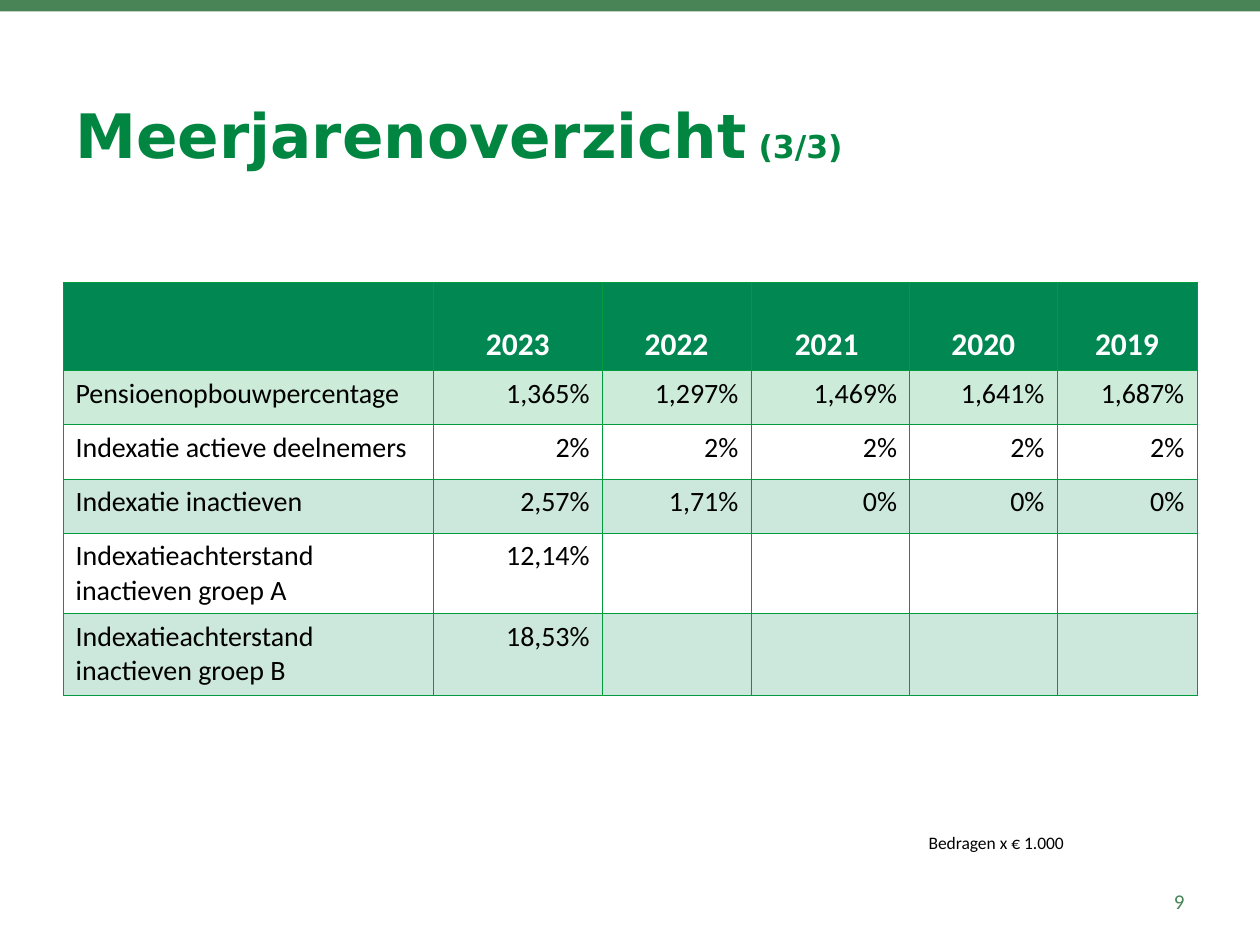
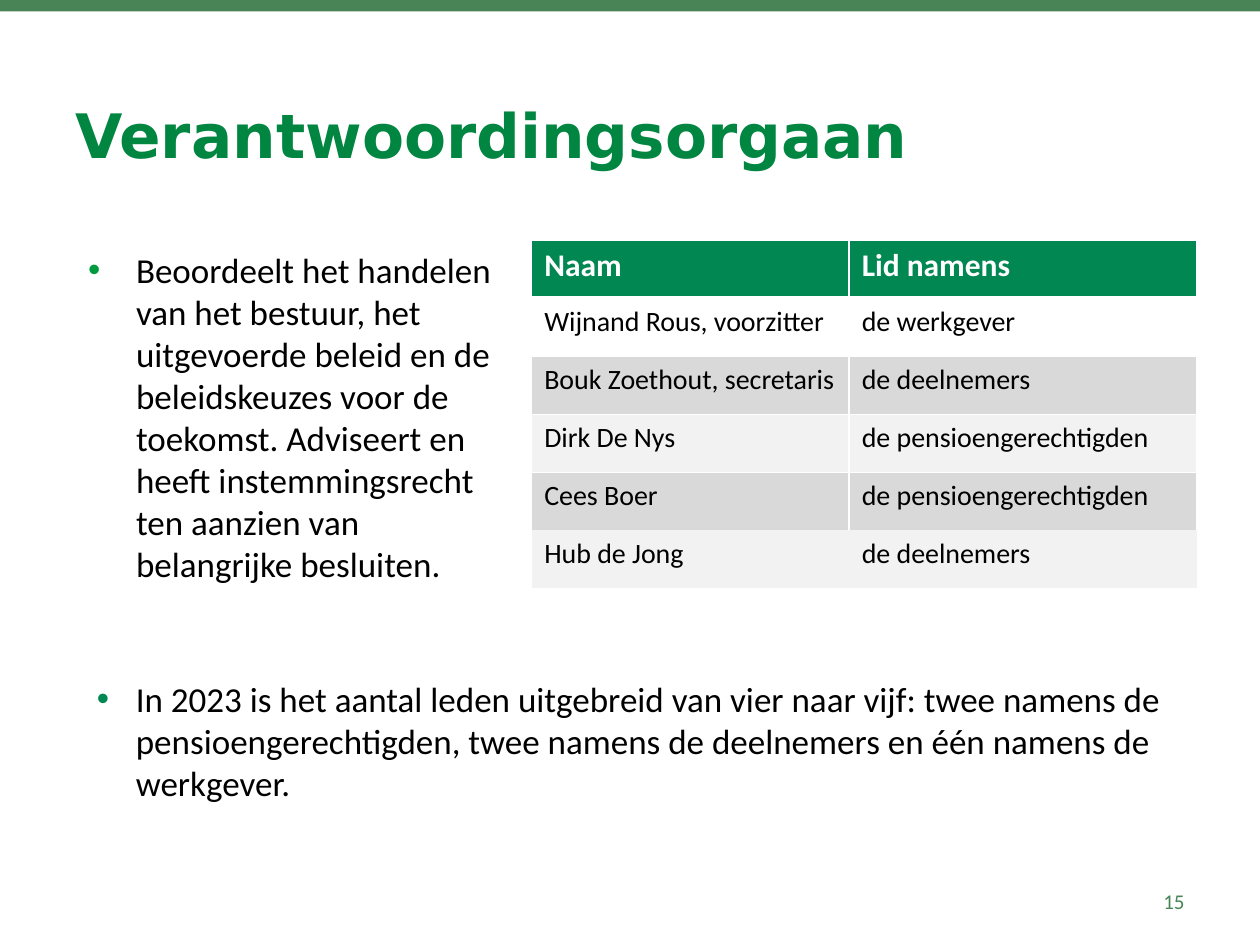
from dataclasses import dataclass
from pptx import Presentation
from pptx.dml.color import RGBColor
from pptx.enum.shapes import MSO_SHAPE as Shape
from pptx.enum.text import MSO_ANCHOR as Anchor, PP_ALIGN as Align
from pptx.oxml import parse_xml
from pptx.oxml.ns import nsdecls, qn
from pptx.util import Inches, Pt


@dataclass(frozen=True)
class Theme:
    """Colours, fonts and type sizes of the deck."""
    band: str = "488455"
    title: str = "008640"
    header: str = "008752"
    accent: str = "009B3E"
    ink: str = "000000"
    white: str = "FFFFFF"
    grey: str = "D9D9D9"
    pale: str = "F2F2F2"
    title_font: str = "DejaVu Sans"
    body_font: str = "Calibri"
    title_size: int = 35
    body_size: int = 20
    header_size: int = 18
    cell_size: int = 16
    number_size: int = 12
    note_size: int = 10


THEME = Theme()
TITLE_BOX = (0.5, 0.52, 9, 1.09)
NUMBER_BOX = (7.17, 6.95, 2.33, 0.4)
INSETS = (0.1, 0.05, 0.1, 0.05)


def style(font, size, color=THEME.ink, face=THEME.body_font, bold=False):
    """Set the look of a font."""
    font.size, font.name, font.bold = Pt(size), face, bold
    font.color.rgb = RGBColor.from_string(color)


def add_text(slide, box, text, anchor=Anchor.TOP, insets=INSETS):
    """Add a wrapping text box and return its first paragraph."""
    frame = slide.shapes.add_textbox(*map(Inches, box)).text_frame
    frame.word_wrap, frame.vertical_anchor = True, anchor
    (frame.margin_left, frame.margin_top,
     frame.margin_right, frame.margin_bottom) = map(Inches, insets)
    paragraph = frame.paragraphs[0]
    paragraph.text = text
    return paragraph


def add_bullet(slide, box, text, indent, color, insets=INSETS):
    """Add a text box with one bulleted paragraph."""
    paragraph = add_text(slide, box, text, insets=insets)
    properties = paragraph._p.get_or_add_pPr()
    properties.set("marL", str(Inches(indent)))
    properties.set("indent", str(-Inches(indent)))
    for xml in (f'<a:buClr {nsdecls("a")}><a:srgbClr val="{color}"/></a:buClr>',
                f'<a:buFont {nsdecls("a")} typeface="Arial"/>',
                f'<a:buChar {nsdecls("a")} char="•"/>'):
        properties.append(parse_xml(xml))
    style(paragraph.font, THEME.body_size)


def add_frame(prs, title, number, part=None):
    """Add a slide with its top band, title and page number."""
    slide = prs.slides.add_slide(prs.slide_layouts[6])
    band = slide.shapes.add_shape(Shape.RECTANGLE, 0, 0, prs.slide_width, Inches(0.09))
    band.shadow.inherit = False
    band.fill.solid()
    band.fill.fore_color.rgb = RGBColor.from_string(THEME.band)
    band.line.fill.background()

    heading = add_text(slide, TITLE_BOX, title, Anchor.MIDDLE)
    style(heading.font, THEME.title_size, THEME.title, THEME.title_font, True)
    if part:
        suffix = heading.add_run()
        suffix.text = f" {part}"
        suffix.font.size = Pt(THEME.header_size)

    page = add_text(slide, NUMBER_BOX, str(number), Anchor.MIDDLE)
    page.alignment = Align.RIGHT
    style(page.font, THEME.number_size, THEME.band)
    return slide


def set_borders(cell, color, widths):
    """Draw left, right, top and bottom borders; a zero width hides one."""
    properties = cell._tc.get_or_add_tcPr()
    for index, (side, width) in enumerate(zip("LRTB", widths)):
        fill = (f'<a:solidFill><a:srgbClr val="{color}"/></a:solidFill>'
                if width else "<a:noFill/>")
        properties.insert(index, parse_xml(
            f'<a:ln{side} {nsdecls("a")} w="{Pt(width)}">{fill}</a:ln{side}>'))


def fill_cell(cell, color, alpha=None):
    """Fill a cell, with an optional opacity in percent."""
    if color is None:
        cell.fill.background()
        return
    cell.fill.solid()
    cell.fill.fore_color.rgb = RGBColor.from_string(color)
    if alpha:
        rgb = cell._tc.tcPr.find(qn("a:solidFill")).find(qn("a:srgbClr"))
        rgb.append(parse_xml(f'<a:alpha {nsdecls("a")} val="{alpha * 1000}"/>'))


def add_grid(slide, origin, columns, heights, rows, fills, border, widths, aligns,
             header_anchor=Anchor.TOP):
    """Add a table; aligns holds header and body alignment of the value columns."""
    box = (*origin, sum(columns), sum(heights))
    table = slide.shapes.add_table(len(rows), len(columns), *map(Inches, box)).table
    for column, width in zip(table.columns, columns):
        column.width = Inches(width)
    for r, (row, height) in enumerate(zip(rows, heights)):
        table.rows[r].height = Inches(height)
        is_header = r == 0
        for c in range(len(columns)):
            cell = table.cell(r, c)
            cell.text = row[c] if c < len(row) else ""
            cell.vertical_anchor = header_anchor if is_header else Anchor.TOP
            paragraph = cell.text_frame.paragraphs[0]
            paragraph.alignment = aligns[0 if is_header else 1] if c else Align.LEFT
            if is_header:
                style(paragraph.font, THEME.header_size, THEME.white, bold=True)
            else:
                style(paragraph.font, THEME.cell_size)
            set_borders(cell, border, widths[r])
            fill_cell(cell, *fills[r])


def build_overview(prs):
    """Build the multi-year overview slide."""
    slide = add_frame(prs, "Meerjarenoverzicht", 9, "(3/3)")
    note = add_text(slide, (7.17, 6.52, 2.33, 0.98), "Bedragen x € 1.000",
                    insets=(0.2, 0.39, 0.2, 0.39))
    style(note.font, THEME.note_size)
    rows = [
        ("", "2023", "2022", "2021 ", "2020", "2019"),
        ("Pensioenopbouwpercentage", "1,365%", "1,297%", "1,469%", "1,641%", "1,687%"),
        ("Indexatie actieve deelnemers", *["2%"] * 5),
        ("Indexatie inactieven", "2,57%", "1,71%", *["0%"] * 3),
        ("Indexatieachterstand inactieven groep A", "12,14%"),
        ("Indexatieachterstand inactieven groep B", "18,53%"),
    ]
    tint = (THEME.header, 20)
    fills = [(THEME.header,), (THEME.accent, 20), (None,), tint, (None,), tint]
    add_grid(slide, (0.5, 2.24), (2.94, 1.34, 1.18, 1.26, 1.17, 1.11),
             (0.7, 0.43, 0.43, 0.43, 0.64, 0.65), rows, fills, THEME.accent,
             [(0.25,) * 4] * len(rows), (Align.CENTER, Align.RIGHT), Anchor.BOTTOM)


def build_accountability(prs):
    """Build the slide about the accountability body and its members."""
    slide = add_frame(prs, "Verantwoordingsorgaan", 15)
    add_bullet(slide, (0.5, 1.97, 3.63, 3.23),
               "Beoordeelt het handelen van het bestuur, het uitgevoerde beleid en de "
               "beleidskeuzes voor de toekomst. Adviseert en heeft instemmingsrecht ten "
               "aanzien van belangrijke besluiten.",
               0.38, THEME.accent, (0.2, 0, 0.2, 0))
    members = [
        ("Naam", "Lid namens"),
        ("Wijnand Rous, voorzitter", "de werkgever"),
        ("Bouk Zoethout, secretaris", "de deelnemers"),
        ("Dirk De Nys", "de pensioengerechtigden"),
        ("Cees Boer", "de pensioengerechtigden"),
        ("Hub de Jong", "de deelnemers"),
    ]
    fills = [(THEME.header,), (THEME.white,)] + [(THEME.grey,), (THEME.pale,)] * 2
    widths = [(1, 1, 1, 3), (1, 1, 3, 1), (1,) * 4, (1,) * 4, (1, 1, 1, 0), (0,) * 4]
    add_grid(slide, (4.22, 1.91), (2.52, 2.76), [0.46] * len(members), members, fills,
             THEME.white, widths, (Align.LEFT, Align.LEFT))
    add_bullet(slide, (0.67, 5.33, 9, 1.11),
               "In 2023 is het aantal leden uitgebreid van vier naar vijf: twee namens de "
               "pensioengerechtigden, twee namens de deelnemers en één namens de werkgever.",
               0.31, THEME.header)


def main():
    """Build and save the presentation."""
    prs = Presentation()
    prs.slide_width, prs.slide_height = Inches(10), Inches(7.5)
    build_overview(prs)
    build_accountability(prs)
    prs.save("out.pptx")


if __name__ == "__main__":
    main()
